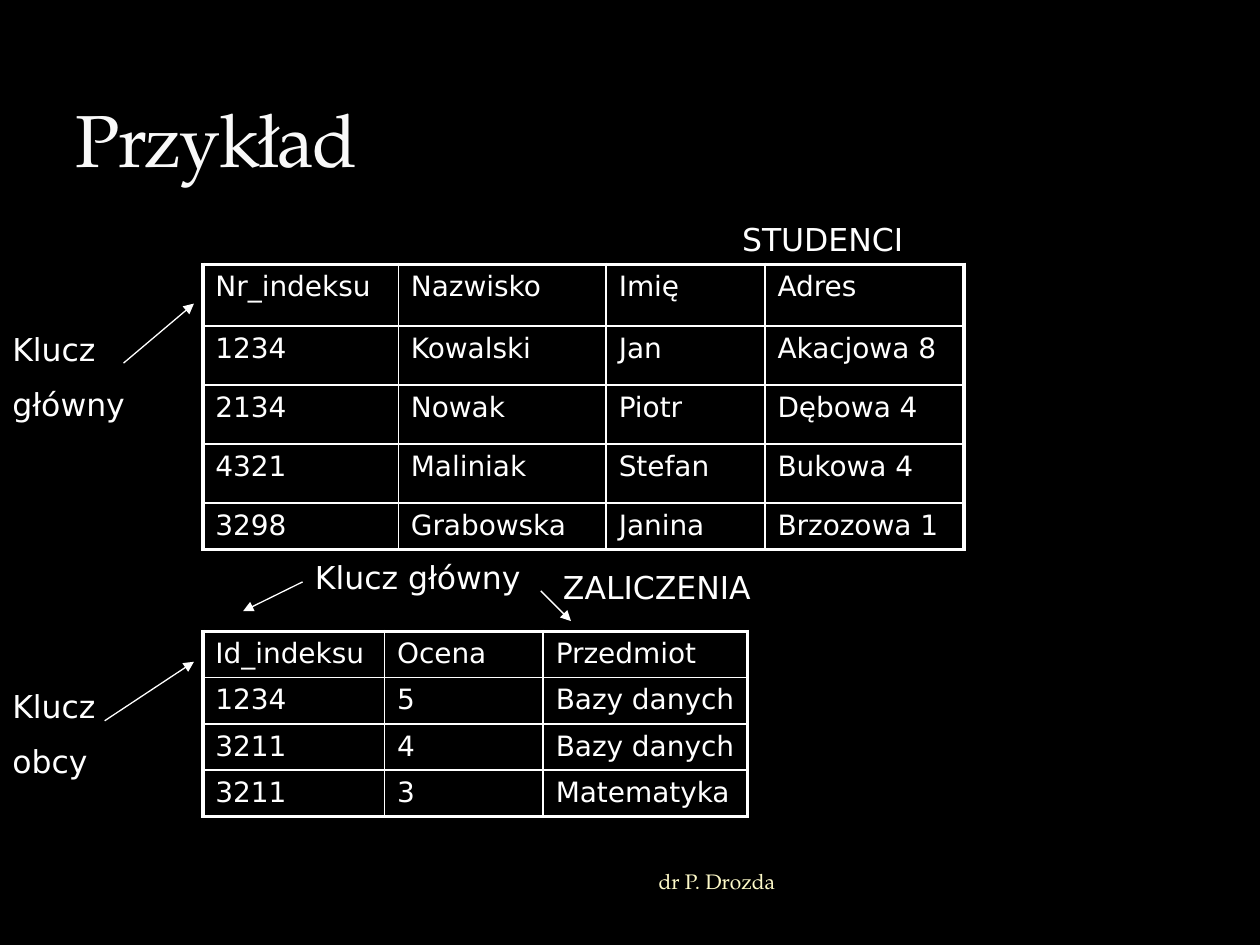
from dataclasses import dataclass

from lxml.etree import SubElement
from pptx import Presentation
from pptx.dml.color import RGBColor as RGB
from pptx.enum.shapes import MSO_CONNECTOR as Conn
from pptx.enum.text import MSO_ANCHOR as Anchor, MSO_AUTO_SIZE as AutoSize, PP_ALIGN as Align
from pptx.oxml.ns import qn
from pptx.util import Cm, Pt


@dataclass(frozen=True)
class Theme:
    back: RGB = RGB(0, 0, 0)
    ink: RGB = RGB(255, 255, 255)
    title_ink: RGB = RGB(0xF9, 0xF9, 0xF9)
    footer_ink: RGB = RGB(0xFE, 0xFA, 0xC9)
    serif: str = "TeX Gyre Pagella"
    sans: str = "DejaVu Sans"
    title_size: int = 42
    label_size: int = 18
    cell_size: int = 16
    footer_size: int = 12
    label_gap: float = 10
    arrow_width: float = 0.75
    inner_border: float = 1
    outer_border: float = 2.25


class SlideBuilder:
    def __init__(self, prs, theme):
        self.t = theme
        self.s = prs.slides.add_slide(prs.slide_layouts[5])
        fill = self.s.background.fill
        fill.solid()
        fill.fore_color.rgb = theme.back

    def add_text(self, p, text, font, size, color):
        r = p.add_run()
        r.text = text
        for key, value in {"name": font, "size": Pt(size)}.items():
            setattr(r.font, key, value)
        r.font.color.rgb = color
        return r

    def title(self, text, x, y, w, h):
        sp, t = self.s.shapes.title, self.t
        for key, value in {"left": x, "top": y, "width": w, "height": h}.items():
            setattr(sp, key, Cm(value))
        tf = sp.text_frame
        for key, value in {"vertical_anchor": Anchor.BOTTOM, "word_wrap": True,
                           "auto_size": AutoSize.NONE}.items():
            setattr(tf, key, value)
        p = tf.paragraphs[0]
        p.alignment = Align.LEFT
        r = self.add_text(p, text, t.serif, t.title_size, t.title_ink)
        r.font._element.set("spc", "-100")

    def text_box(self, x, y, w, h):
        tf = self.s.shapes.add_textbox(Cm(x), Cm(y), Cm(w), Cm(h)).text_frame
        tf.word_wrap = True
        return tf

    def label(self, lines, x, y, w, h):
        t, tf = self.t, self.text_box(x, y, w, h)
        for i, line in enumerate(lines):
            p = tf.add_paragraph() if i else tf.paragraphs[0]
            if i:
                p.space_before = Pt(t.label_gap)
            self.add_text(p, line, t.sans, t.label_size, t.ink)

    def footer(self, text, x, y, w, h):
        t, tf = self.t, self.text_box(x, y, w, h)
        tf.vertical_anchor = Anchor.MIDDLE
        p = tf.paragraphs[0]
        p.alignment = Align.RIGHT
        self.add_text(p, text, t.serif, t.footer_size, t.footer_ink)

    def border(self, cell, side, width):
        ln = SubElement(cell._tc.get_or_add_tcPr(), qn(f"a:ln{side}"), w=str(Pt(width)))
        fill = SubElement(ln, qn("a:solidFill"))
        SubElement(fill, qn("a:srgbClr"), val=str(self.t.ink))

    def table(self, rows, x, y, widths, heights):
        t, n_rows, n_cols = self.t, len(rows), len(widths)
        tbl = self.s.shapes.add_table(n_rows, n_cols, Cm(x), Cm(y),
                                      Cm(sum(widths)), Cm(sum(heights))).table
        tbl.first_row = tbl.horz_banding = False
        for col, w in zip(tbl.columns, widths):
            col.width = Cm(w)
        for row, h in zip(tbl.rows, heights):
            row.height = Cm(h)
        for i, values in enumerate(rows):
            for j, value in enumerate(values):
                cell = tbl.cell(i, j)
                self.add_text(cell.text_frame.paragraphs[0], value, t.sans, t.cell_size, t.ink)
                # Thick frame outside, thin grid inside
                edges = {"L": j == 0, "R": j == n_cols - 1, "T": i == 0, "B": i == n_rows - 1}
                for side, outer in edges.items():
                    self.border(cell, side, t.outer_border if outer else t.inner_border)
                cell.fill.background()

    def arrow(self, x1, y1, x2, y2):
        c = self.s.shapes.add_connector(Conn.STRAIGHT, Cm(x1), Cm(y1), Cm(x2), Cm(y2))
        c.line.width = Pt(self.t.arrow_width)
        c.line.color.rgb = self.t.ink
        SubElement(c.line._get_or_add_ln(), qn("a:tailEnd"), type="triangle")
        SubElement(c._element.spPr, qn("a:effectLst"))


STUDENTS = [
    ("Nr_indeksu", "Nazwisko", "Imię", "Adres"),
    ("1234", "Kowalski", "Jan", "Akacjowa 8"),
    ("2134", "Nowak", "Piotr", "Dębowa 4"),
    ("4321", "Maliniak", "Stefan", "Bukowa 4"),
    ("3298", "Grabowska", "Janina", "Brzozowa 1"),
]
GRADES = [
    ("Id_indeksu", "Ocena", "Przedmiot"),
    ("1234", "5", "Bazy danych"),
    ("3211", "4", "Bazy danych"),
    ("3211", "3", "Matematyka"),
]
TABLE_LEFT = 4.09


def main():
    prs = Presentation()
    prs.slide_width, prs.slide_height = Cm(25.4), Cm(19.05)
    b = SlideBuilder(prs, Theme())

    # Title and footer
    b.footer("dr P. Drozda", 5.92, 17.22, 9.96, 1.07)
    b.title("Przykład", 1.27, 0.43, 22.86, 3.38)

    # Tables
    b.table(STUDENTS, TABLE_LEFT, 5.33, [3.94, 4.19, 3.2, 4.01], [1.24] + [1.19] * 3 + [0.9])
    b.table(GRADES, TABLE_LEFT, 12.73, [3.66, 3.2, 4.12], [0.91] * 4)

    # Table names and key labels
    for lines, box in [
        (["STUDENCI"], (14.71, 4.32, 5.21, 1.02)),
        (["ZALICZENIA"], (11.1, 11.33, 5.21, 1.02)),
        (["Klucz", "główny"], (0, 6.53, 3, 2.16)),
        (["Klucz", "obcy"], (0, 13.72, 2.39, 2.16)),
        (["Klucz główny"], (6.1, 11.13, 4.8, 1.02)),
    ]:
        b.label(lines, *box)

    # Arrows from the labels to the key columns
    for ends in [
        (2.49, 7.32, 3.91, 6.12),
        (2.11, 14.53, 3.91, 13.34),
        (6.1, 11.73, 4.9, 12.32),
        (10.9, 11.91, 11.51, 12.52),
    ]:
        b.arrow(*ends)

    prs.save("out.pptx")


if __name__ == "__main__":
    main()
